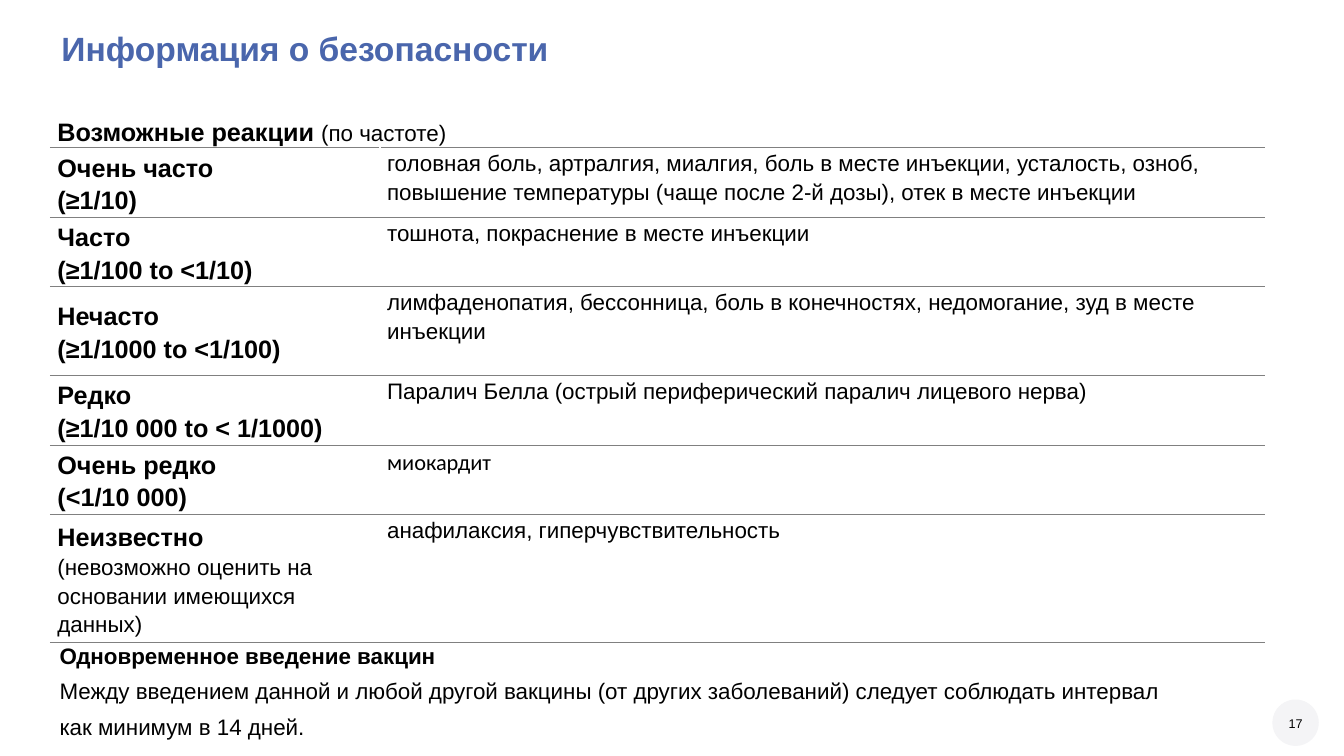
from typing import NamedTuple

from pptx import Presentation, util as u
from pptx.dml import color
from pptx.enum import shapes, text
from pptx.oxml import parse_xml
from pptx.oxml.ns import nsdecls

BLACK, WHITE, GREY = "000000", "FFFFFF", "808080"
BLUE, PALE = "4A66AC", "F4F4F6"


class Line(NamedTuple):
    content: str
    size: int = 16
    bold: bool = False
    font: str = "Arial"
    color: str = BLACK


class Reaction(NamedTuple):
    frequency: Line
    limits: Line
    effects: Line
    height: float


def heading(content: str) -> Line:
    return Line(content, 18, True)


REACTIONS = [
    Reaction(heading("Очень часто"), heading("(≥1/10)"),
             Line("головная боль, артралгия, миалгия, боль в месте инъекции, усталость, озноб, "
                  "повышение температуры (чаще после 2-й дозы), отек в месте инъекции"), 0.64),
    Reaction(heading("Часто"), heading("(≥1/100 to ˂1/10)"),
             Line("тошнота, покраснение в месте инъекции"), 0.67),
    Reaction(heading("Нечасто"), heading("(≥1/1000 to ˂1/100)"),
             Line("лимфаденопатия, бессонница, боль в конечностях, недомогание, "
                  "зуд в месте инъекции"), 0.88),
    Reaction(heading("Редко"), heading("(≥1/10 000 to ˂ 1/1000)"),
             Line("Паралич Белла (острый периферический паралич лицевого нерва)"), 0.67),
    Reaction(heading("Очень редко"), heading("(<1/10 000)"),
             Line("миокардит", font="Calibri"), 0.67),
    Reaction(heading("Неизвестно"),
             Line("(невозможно оценить на основании имеющихся данных)"),
             Line("анафилаксия, гиперчувствительность"), 1.13),
]
ADVICE = [
    Line("Одновременное введение вакцин", bold=True),
    Line("Между введением данной и любой другой вакцины (от других заболеваний) "
         "следует соблюдать интервал"),
    Line("как минимум в 14 дней."),
]


def rgb(value: str) -> color.RGBColor:
    return color.RGBColor.from_string(value)


def set_font(font, line: Line) -> None:
    font.name, font.size, font.bold = line.font, u.Pt(line.size), line.bold
    font.color.rgb = rgb(line.color)


def write(frame, lines: list[Line], spacing: float = 1.0, gap: int = 0) -> None:
    for index, line in enumerate(lines):
        para = frame.add_paragraph() if index else frame.paragraphs[0]
        para.text = line.content
        para.line_spacing = spacing
        para.space_before = u.Pt(gap if index else 0)
        para.space_after = u.Pt(gap)
        set_font(para.font, line)


def clear_margins(frame) -> None:
    frame.margin_left = frame.margin_right = frame.margin_top = frame.margin_bottom = 0


def place(box, left: float, top: float, width: float, height: float) -> None:
    box.left, box.top = u.Inches(left), u.Inches(top)
    box.width, box.height = u.Inches(width), u.Inches(height)


def add_text(page, left: float, top: float, width: float, height: float):
    box = page.shapes.add_textbox(*map(u.Inches, (left, top, width, height)))
    clear_margins(box.text_frame)
    return box.text_frame


def style_cell(cell, top_color: str, anchor) -> None:
    cell.margin_left = cell.margin_right = u.Inches(0.07)
    cell.margin_top = cell.margin_bottom = 0
    cell.vertical_anchor = anchor
    cell.fill.background()
    edges = {"lnL": WHITE, "lnR": WHITE, "lnT": top_color, "lnB": GREY}
    properties = cell._tc.get_or_add_tcPr()
    for index, (edge, value) in enumerate(edges.items()):
        properties.insert(index, parse_xml(
            f'<a:{edge} {nsdecls("a")} w="12700"><a:solidFill>'
            f'<a:srgbClr val="{value}"/></a:solidFill></a:{edge}>'))


def add_title(page) -> None:
    title = page.shapes.title
    place(title, 0.61, 0.28, 12.12, 0.4)
    frame = title.text_frame
    clear_margins(frame)
    frame.auto_size = text.MSO_AUTO_SIZE.NONE
    frame.vertical_anchor = text.MSO_ANCHOR.TOP
    write(frame, [Line("Информация о безопасности", 24, True, color=BLUE)])
    frame.paragraphs[0].alignment = text.PP_ALIGN.LEFT


def add_reactions(page) -> None:
    heights = [0.31] + [reaction.height for reaction in REACTIONS]
    table = page.shapes.add_table(
        len(heights), 2, u.Inches(0.5), u.Inches(1.12),
        u.Inches(12.04), u.Inches(sum(heights))).table
    table.first_row = table.horz_banding = False
    for column, width in zip(table.columns, (3.27, 8.77)):
        column.width = u.Inches(width)
    for index, (row, height) in enumerate(zip(table.rows, heights)):
        row.height = u.Inches(height)
        for cell, anchor in zip(row.cells, (text.MSO_ANCHOR.MIDDLE, text.MSO_ANCHOR.TOP)):
            style_cell(cell, GREY if index else WHITE, anchor)

    header = table.cell(0, 0)
    header.merge(table.cell(0, 1))
    para = header.text_frame.paragraphs[0]
    para.line_spacing = 1.15
    for line in (heading("Возможные реакции "), Line("(по частоте)")):
        span = para.add_run()
        span.text = line.content
        set_font(span.font, line)

    for index, reaction in enumerate(REACTIONS, 1):
        write(table.cell(index, 0).text_frame, [reaction.frequency, reaction.limits], 1.15)
        write(table.cell(index, 1).text_frame, [reaction.effects], 1.15)


def add_page_number(page) -> None:
    badge = page.shapes.add_shape(
        shapes.MSO_SHAPE.OVAL, *map(u.Inches, (12.62, 6.94, 0.46, 0.46)))
    badge.shadow.inherit = False
    badge.fill.solid()
    badge.fill.fore_color.rgb = rgb(PALE)
    badge.line.fill.background()
    frame = add_text(page, 12.67, 7.1, 0.36, 0.15)
    frame.word_wrap = True
    frame.vertical_anchor = text.MSO_ANCHOR.BOTTOM
    write(frame, [Line("17", 9)])
    frame.paragraphs[0].alignment = text.PP_ALIGN.CENTER


def main() -> None:
    deck = Presentation()
    deck.slide_width, deck.slide_height = u.Inches(13.33), u.Inches(7.5)
    page = deck.slides.add_slide(deck.slide_layouts[5])
    add_page_number(page)
    add_title(page)
    add_reactions(page)
    advice = add_text(page, 0.59, 6.37, 12.12, 1)
    advice.word_wrap = True
    write(advice, ADVICE, gap=3)
    deck.save("out.pptx")


if __name__ == "__main__":
    main()
